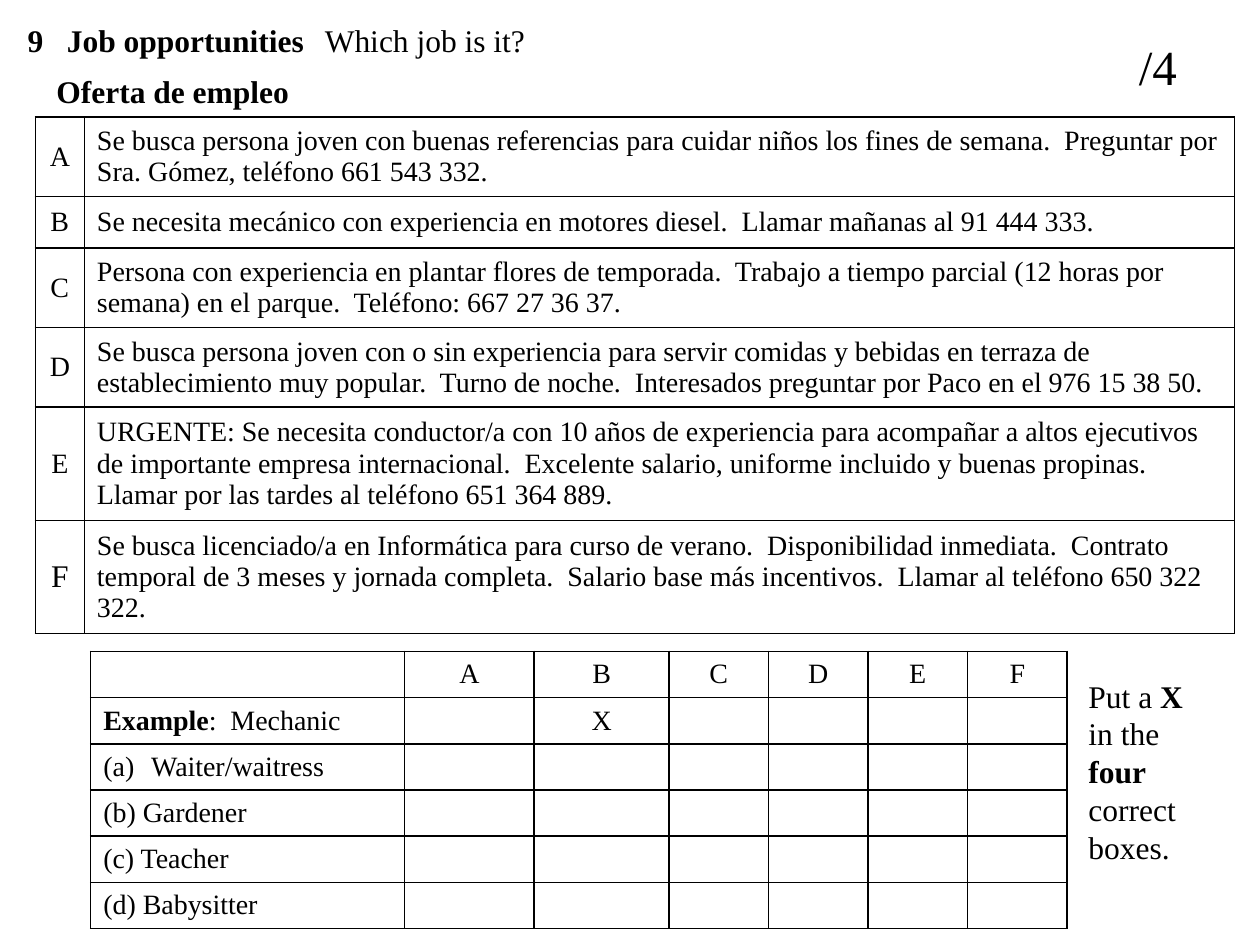
from lxml.etree import SubElement
from pptx import Presentation
from pptx.dml.color import RGBColor
from pptx.enum.text import MSO_ANCHOR, PP_ALIGN
from pptx.oxml.ns import qn
from pptx.util import Inches, Pt

BLACK = RGBColor(0, 0, 0)
FONT = "Times New Roman"
LETTERS = "ABCDEF"

ADVERTS = [
    "Se busca persona joven con buenas referencias para cuidar niños los fines de semana.  "
    "Preguntar por Sra. Gómez, teléfono 661 543 332.",
    "Se necesita mecánico con experiencia en motores diesel.  Llamar mañanas al 91 444 333.",
    "Persona con experiencia en plantar flores de temporada.  Trabajo a tiempo parcial "
    "(12 horas por semana) en el parque.  Teléfono: 667 27 36 37.",
    "Se busca persona joven con o sin experiencia para servir comidas y bebidas en terraza de "
    "establecimiento muy popular.  Turno de noche.  Interesados preguntar por Paco en el "
    "976 15 38 50.",
    "URGENTE: Se necesita conductor/a con 10 años de experiencia para acompañar a altos "
    "ejecutivos de importante empresa internacional.  Excelente salario, uniforme incluido y "
    "buenas propinas.  Llamar por las tardes al teléfono 651 364 889.",
    "Se busca licenciado/a en Informática para curso de verano.  Disponibilidad inmediata.  "
    "Contrato temporal de 3 meses y jornada completa.  Salario base más incentivos.  "
    "Llamar al teléfono 650 322 322.",
]
ADVERT_ROW_HEIGHTS = [0.63, 0.41, 0.63, 0.63, 0.9, 0.9]
JOBS = ["Waiter/waitress", "(b) Gardener", "(c) Teacher", "(d) Babysitter"]


def write_runs(paragraph, runs, size):
    """Add (text, bold) pairs to a paragraph."""
    for text, bold in runs:
        run = paragraph.add_run()
        run.text = text
        run.font.name = FONT
        run.font.size = Pt(size)
        run.font.bold = bold
        run.font.color.rgb = BLACK


def add_text(slide, box, runs, size=18):
    text_frame = slide.shapes.add_textbox(*map(Inches, box)).text_frame
    text_frame.word_wrap = True
    write_runs(text_frame.paragraphs[0], runs, size)


def write_cell(cell, runs, size=16, centred=False):
    paragraph = cell.text_frame.paragraphs[0]
    if centred:
        paragraph.alignment = PP_ALIGN.CENTER
    write_runs(paragraph, runs, size)


def set_borders(cell):
    properties = cell._tc.get_or_add_tcPr()
    for index, side in enumerate(("a:lnL", "a:lnR", "a:lnT", "a:lnB")):
        line = properties.makeelement(qn(side), {"w": str(Pt(1))})
        fill = SubElement(line, qn("a:solidFill"))
        SubElement(fill, qn("a:srgbClr"), val=str(BLACK))
        properties.insert(index, line)


def add_grid(slide, box, column_widths, row_heights):
    """Add an empty table with black rules and no fill."""
    table = slide.shapes.add_table(
        len(row_heights), len(column_widths), *map(Inches, box)).table
    table.first_row = table.horz_banding = False
    for column, width in zip(table.columns, column_widths):
        column.width = Inches(width)
    for row, height in zip(table.rows, row_heights):
        row.height = Inches(height)
    for cell in table.iter_cells():
        cell.fill.background()
        cell.vertical_anchor = MSO_ANCHOR.MIDDLE
        cell.margin_top = cell.margin_bottom = Inches(0.03)
        set_borders(cell)
    return table


def number_paragraph(paragraph):
    """Number the paragraph as (a), with a hanging indent."""
    properties = paragraph._p.get_or_add_pPr()
    properties.set("marL", str(Inches(0.38)))
    properties.set("indent", str(-Inches(0.38)))
    SubElement(properties, qn("a:buFont"), typeface=FONT)
    SubElement(properties, qn("a:buAutoNum"), type="alphaLcParenBoth")


def add_heading(slide):
    add_text(slide, (0.12, 0.12, 4.02, 0.4), [("9   Job opportunities", True)])
    add_text(slide, (2.48, 0.12, 6.77, 0.4), [("Which job is it?", False)])
    add_text(slide, (8.94, 0.24, 0.87, 0.57), [("/4", False)], size=28)
    add_text(slide, (0.35, 0.52, 6.77, 0.4), [("Oferta de empleo", True)])


def add_answer_table(slide, box):
    row_count = len(JOBS) + 2
    table = add_grid(slide, box, [2.49, 1.03, 1.07] + [0.79] * 4,
                     [box[3] / row_count] * row_count)
    for column, letter in enumerate(LETTERS, start=1):
        write_cell(table.cell(0, column), [(letter, False)], centred=True)
    write_cell(table.cell(1, 0), [("Example", True), (":  Mechanic", False)])
    write_cell(table.cell(1, 2), [("X", False)], centred=True)
    for row, job in enumerate(JOBS, start=2):
        write_cell(table.cell(row, 0), [(job, False)])
    number_paragraph(table.cell(2, 0).text_frame.paragraphs[0])


def add_advert_table(slide, box):
    table = add_grid(slide, box, [0.39, 9.13], ADVERT_ROW_HEIGHTS)
    for row, (letter, advert) in enumerate(zip(LETTERS, ADVERTS)):
        size = 18 if letter == "F" else 16
        write_cell(table.cell(row, 0), [(letter, False)], size, centred=True)
        write_cell(table.cell(row, 1), [(advert, False)])


def main():
    presentation = Presentation()
    presentation.slide_width = Inches(10)
    presentation.slide_height = Inches(7.5)
    slide = presentation.slides.add_slide(presentation.slide_layouts[6])
    add_heading(slide)
    add_answer_table(slide, (0.72, 5.17, 7.75, 2.2))
    add_text(slide, (8.54, 5.32, 1.02, 1.62),
             [("Put a ", False), ("X ", True), ("in the ", False),
              ("four", True), (" correct boxes.", False)])
    add_advert_table(slide, (0.28, 0.93, 9.52, 4.1))
    presentation.save("out.pptx")


if __name__ == "__main__":
    main()
